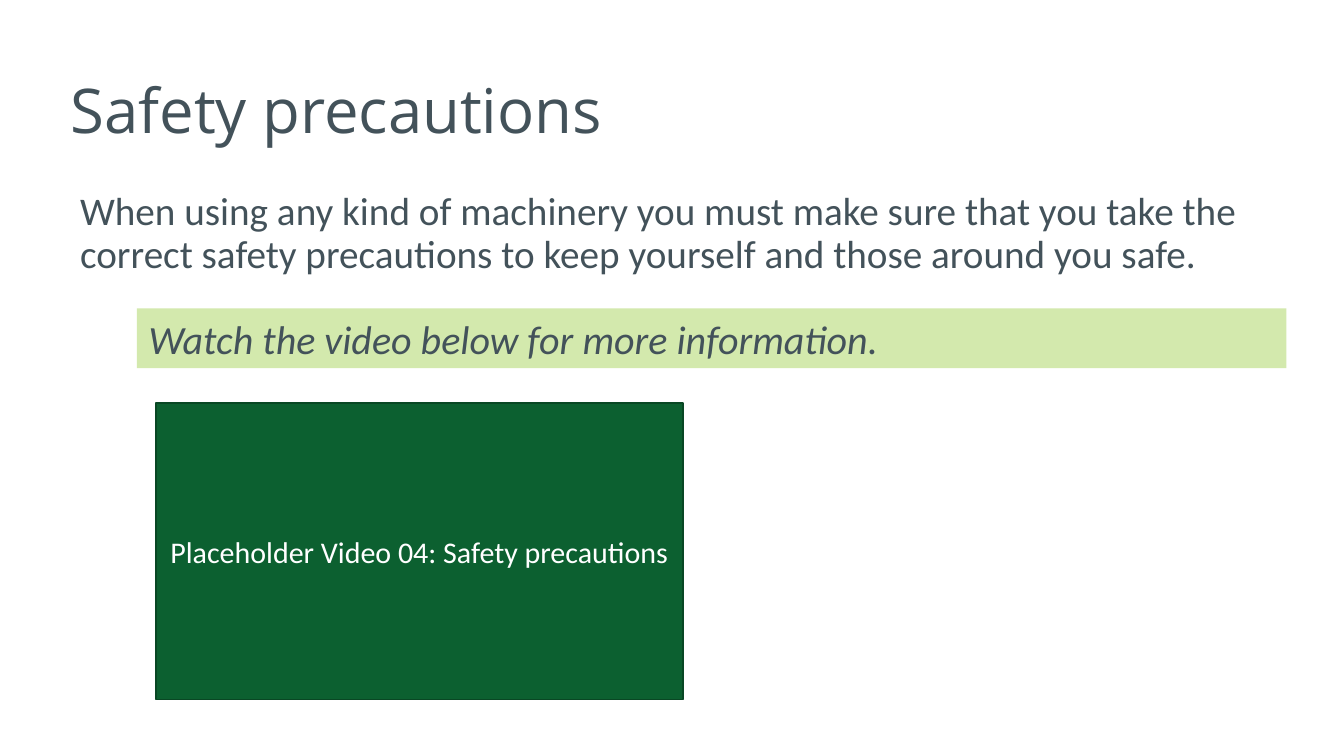
"""Build the safety precautions slide with its video placeholder."""
from dataclasses import dataclass
from typing import Optional

from pptx import Presentation
from pptx.dml.color import RGBColor
from pptx.enum.shapes import MSO_SHAPE
from pptx.enum.text import MSO_ANCHOR, PP_ALIGN
from pptx.slide import Slide
from pptx.util import Pt

SLATE = RGBColor(0x43, 0x52, 0x5A)
LIME = RGBColor(0xD3, 0xE9, 0xAD)
GREEN = RGBColor(0x0C, 0x60, 0x30)
DARK_GREEN = RGBColor(0x09, 0x47, 0x24)
WHITE = RGBColor(0xFF, 0xFF, 0xFF)


@dataclass(frozen=True)
class Block:
    """One block of text, with an optional filled panel behind it."""

    text: str
    left: float
    top: float
    width: float
    height: float
    size: float
    font: str = "Calibri"
    color: RGBColor = SLATE
    italic: bool = False
    anchor: MSO_ANCHOR = MSO_ANCHOR.TOP
    align: PP_ALIGN = PP_ALIGN.LEFT
    line_spacing: float = 1.0
    space_before: float = 0
    fill: Optional[RGBColor] = None
    outline: Optional[RGBColor] = None


BLOCKS = (
    Block("Safety precautions", 35.3, 24.5, 695.5, 87.8, 37, font="Open Sans",
          anchor=MSO_ANCHOR.MIDDLE, line_spacing=0.9),
    Block("When using any kind of machinery you must make sure that you take the "
          "correct safety precautions to keep yourself and those around you safe.",
          41, 111.6, 725, 74.2, 23.5, line_spacing=0.9, space_before=8.4),
    Block("Watch the video below for more information.",
          82.1, 185, 689.8, 36, 24, italic=True, fill=LIME),
    Block("Placeholder Video 04: Safety precautions", 93.6, 241.9, 316.1, 177.8, 18,
          color=WHITE, anchor=MSO_ANCHOR.MIDDLE, align=PP_ALIGN.CENTER,
          fill=GREEN, outline=DARK_GREEN),
)


def draw_block(slide: Slide, block: Block) -> None:
    """Draw a block as a text box, or as a rectangle when it has a fill."""
    bounds = Pt(block.left), Pt(block.top), Pt(block.width), Pt(block.height)
    if block.fill is None:
        panel = slide.shapes.add_textbox(*bounds)
    else:
        panel = slide.shapes.add_shape(MSO_SHAPE.RECTANGLE, *bounds)
        panel.shadow.inherit = False
        panel.fill.solid()
        panel.fill.fore_color.rgb = block.fill
        if block.outline is None:
            panel.line.fill.background()
        else:
            panel.line.color.rgb = block.outline
            panel.line.width = Pt(1)

    frame = panel.text_frame
    frame.word_wrap = True
    frame.vertical_anchor = block.anchor
    wording = frame.paragraphs[0]
    wording.text = block.text
    wording.alignment = block.align
    wording.line_spacing = block.line_spacing
    wording.space_before = Pt(block.space_before)
    wording.font.name = block.font
    wording.font.size = Pt(block.size)
    wording.font.italic = block.italic
    wording.font.color.rgb = block.color


def main() -> None:
    """Create the presentation and save it."""
    presentation = Presentation()
    presentation.slide_width = Pt(806.4)
    presentation.slide_height = Pt(453.6)
    slide = presentation.slides.add_slide(presentation.slide_layouts[6])
    for block in BLOCKS:
        draw_block(slide, block)
    presentation.save("out.pptx")


if __name__ == "__main__":
    main()
